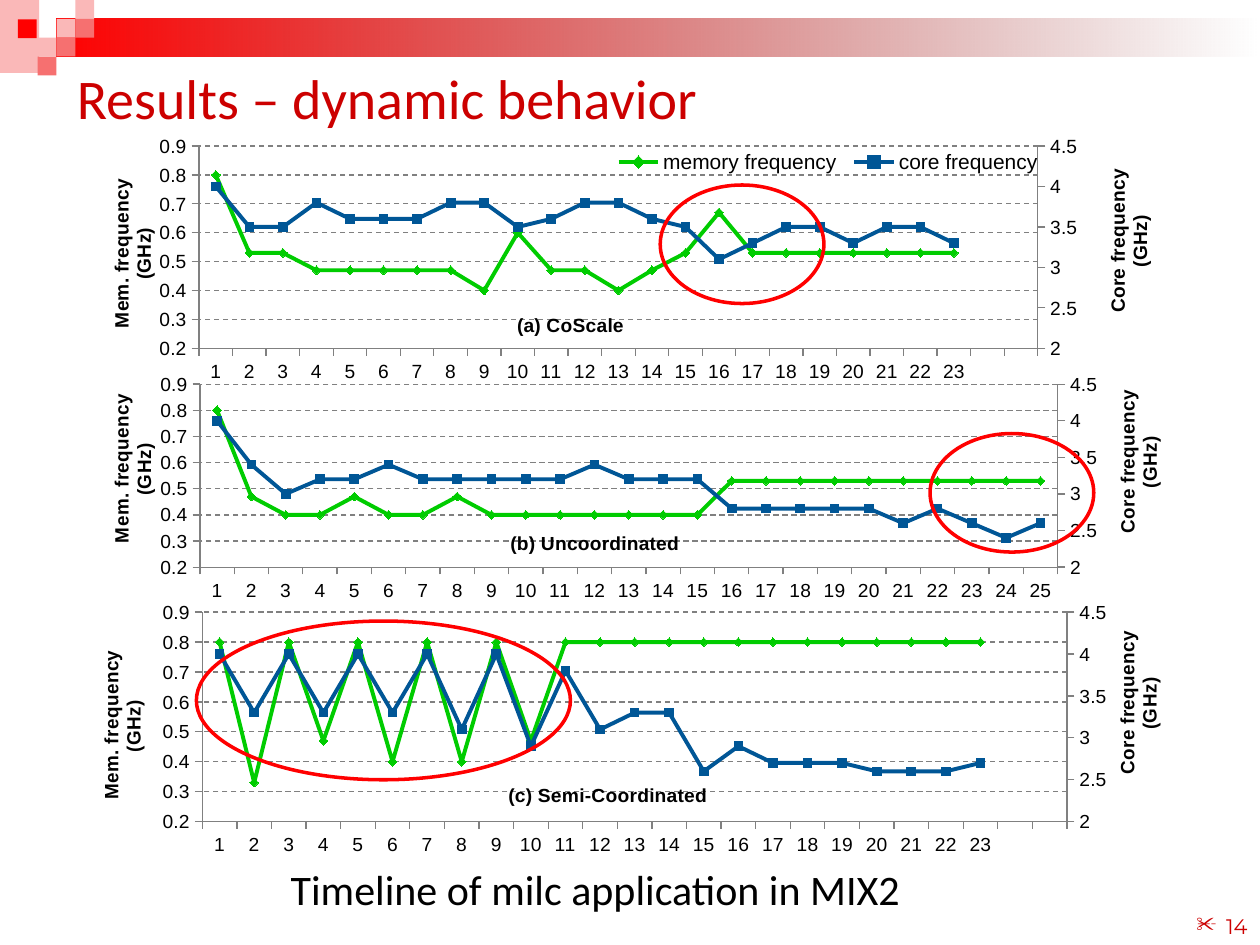
from copy import deepcopy
from dataclasses import dataclass

from lxml import etree
from pptx import Presentation
from pptx import util as u
from pptx.chart import axis as ax
from pptx.chart import data as cd
from pptx.dml.color import RGBColor
from pptx.enum import chart as ce, dml, shapes, text
from pptx.oxml import ns


@dataclass(frozen=True)
class Theme:
    red: str = "FF0000"
    rose: str = "F67070"
    pink: str = "FAB8B8"
    heading: str = "CC0000"
    ink: str = "000000"
    grid: str = "808080"
    memory: str = "00CC00"
    core: str = "005696"
    body_font: str = "Calibri"
    chart_font: str = "Arial"
    number_font: str = "Montserrat"
    title_size: int = 32
    caption_size: int = 24
    legend_size: int = 12
    number_size: int = 12
    chart_size: int = 11


THEME = Theme()
EPOCHS = 25
UNIT = 0.38  # side of a corner square, cm

# box in cm; plot, title and axis title places as fractions of the chart
COSCALE = dict(
    title="(a) CoScale", box=(2.11, 2.72, 21.21, 5), plot=(0.09, 0.04, 0.8, 0.82),
    title_at=(0.39, 0.7), left_at=(0, 0.16), right_at=(0.95, 0.12),
    legend=(0.48, 0.06, 0.42, 0.09),
    memory=[0.8, 0.53, 0.53] + [0.47] * 5 + [0.4, 0.6, 0.47, 0.47, 0.4, 0.47, 0.53, 0.67]
    + [0.53] * 7,
    core=[4, 3.5, 3.5, 3.8, 3.6, 3.6, 3.6, 3.8, 3.8, 3.5, 3.6, 3.8, 3.8, 3.6, 3.5, 3.1,
          3.3, 3.5, 3.5, 3.3, 3.5, 3.5, 3.3])
SEMI = dict(
    title="(c) Semi-Coordinated", box=(1.9, 12.12, 21.79, 5.13), plot=(0.1, 0.04, 0.8, 0.84),
    title_at=(0.38, 0.71), left_at=(0, 0.19), right_at=(0.94, 0.11),
    memory=[0.8, 0.33, 0.8, 0.47, 0.8, 0.4, 0.8, 0.4, 0.8, 0.47] + [0.8] * 13,
    core=[4, 3.3, 4, 3.3, 4, 3.3, 4, 3.1, 4, 2.9, 3.8, 3.1, 3.3, 3.3, 2.6, 2.9,
          2.7, 2.7, 2.7, 2.6, 2.6, 2.6, 2.7])
UNCOORDINATED = dict(
    title="(b) Uncoordinated", box=(2.11, 7.52, 21.41, 4.6), plot=(0.09, 0.05, 0.81, 0.82),
    title_at=(0.38, 0.69), left_at=(0, 0.09), right_at=(0.95, 0.07),
    memory=[0.8, 0.47, 0.4, 0.4, 0.47, 0.4, 0.4, 0.47] + [0.4] * 7 + [0.53] * 10,
    core=[4, 3.4, 3, 3.2, 3.2, 3.4] + [3.2] * 5 + [3.4] + [3.2] * 3 + [2.8] * 5
    + [2.6, 2.8, 2.6, 2.4, 2.6])


def rgb(value):
    return RGBColor.from_string(value)


def cm(box):
    return [u.Cm(length) for length in box]


def element(parent, tag, **attributes):
    return etree.SubElement(parent, ns.qn(tag), attributes)


def set_font(font, size, color=THEME.ink, name=THEME.chart_font, bold=False):
    font.size, font.name, font.bold = u.Pt(size), name, bold
    font.color.rgb = rgb(color)


def add_text(page, box, words, *, size, color, font=THEME.body_font,
             align=text.PP_ALIGN.LEFT, anchor=text.MSO_ANCHOR.TOP, spacing=None, bullet=None):
    frame = page.shapes.add_textbox(*cm(box)).text_frame
    frame.word_wrap, frame.vertical_anchor = True, anchor
    para = frame.paragraphs[0]
    para.alignment = align
    if spacing:
        para.line_spacing = spacing
    if bullet:
        properties = para._p.get_or_add_pPr()
        properties.set("marL", str(u.Cm(0.6)))
        properties.set("indent", str(-u.Cm(0.6)))
        element(properties, "a:buChar", char=bullet)
    span = para.add_run()
    span.text = words
    set_font(span.font, size, color, font)


def add_rect(page, box, color):
    rect = page.shapes.add_shape(shapes.MSO_SHAPE.RECTANGLE, *cm(box))
    rect.shadow.inherit = False
    rect.line.fill.background()
    rect.fill.solid()
    rect.fill.fore_color.rgb = rgb(color)
    return rect


def add_banner(page):
    """Draw the fading bar and the corner squares, on a grid of UNIT."""
    add_rect(page, (0, 0, 0.79, 1.47), THEME.pink)
    bar = add_rect(page, (3 * UNIT, 1.2 * UNIT, 25.4 - 3 * UNIT, 2 * UNIT), THEME.red)
    bar.top = u.Cm(UNIT)
    bar.fill.gradient()
    bar.fill.gradient_angle = 0
    start, end = bar.fill.gradient_stops
    start.color.rgb, end.color.rgb = rgb(THEME.red), rgb("760000")
    start.position, end.position = 0, 1
    color = end._gs.find(ns.qn("a:srgbClr"))
    element(color, "a:alpha", val="0")
    for column, row, fill in ((3, 1, THEME.pink), (4, 0, THEME.pink), (4, 1, THEME.rose),
                              (2, 2, THEME.pink), (0.95, 1.03, THEME.red),
                              (3, 2, THEME.rose), (2, 3, THEME.rose)):
        add_rect(page, (column * UNIT, row * UNIT, UNIT, UNIT), fill)


def add_ring(page, box):
    ring = page.shapes.add_shape(shapes.MSO_SHAPE.OVAL, *cm(box))
    ring.shadow.inherit = False
    ring.fill.background()
    ring.line.color.rgb, ring.line.width = rgb(THEME.red), u.Pt(2)


def make_layout(place, inner=False):
    """Return a c:layout for (x, y) or (x, y, w, h) as chart fractions."""
    layout = etree.Element(ns.qn("c:layout"))
    manual = element(layout, "c:manualLayout")
    if inner:
        element(manual, "c:layoutTarget", val="inner")
    for mode in ("xMode", "yMode"):
        element(manual, f"c:{mode}", val="edge")
    for key, value in zip("xywh", place):
        element(manual, f"c:{key}", val=str(value))
    return layout


def place_after(anchor, layout):
    parent = anchor.getparent()
    for old in parent.findall(ns.qn("c:layout")):
        parent.remove(old)
    anchor.addnext(layout)


def set_title(title, words, place, upright=False):
    frame = title.text_frame
    frame.text = words
    set_font(frame.paragraphs[0].runs[0].font, THEME.chart_size, bold=True)
    if upright:
        frame._txBody.bodyPr.set("rot", "-5400000")
        frame._txBody.bodyPr.set("vert", "horz")
    place_after(title._element.find(ns.qn("c:tx")), make_layout(place))


def format_axis(axis):
    axis.major_tick_mark = ce.XL_TICK_MARK.OUTSIDE
    axis.format.line.color.rgb = rgb(THEME.grid)
    set_font(axis.tick_labels.font, THEME.chart_size)


def format_value_axis(axis, words, place, low, high, step):
    format_axis(axis)
    axis.minimum_scale, axis.maximum_scale, axis.major_unit = low, high, step
    set_title(axis.axis_title, words, place, upright=True)


def add_right_axis(chart):
    """Move the second series to its own axes and return the right-hand one."""
    lines = chart._chartSpace.find(".//" + ns.qn("c:lineChart"))
    twin = deepcopy(lines)
    lines.remove(lines.findall(ns.qn("c:ser"))[1])
    twin.remove(twin.find(ns.qn("c:ser")))
    lines.addnext(twin)
    category, value = (deepcopy(axis._element) for axis in (chart.category_axis, chart.value_axis))
    chart.value_axis._element.addnext(value)
    value.addnext(category)
    for axis, own, other in ((category, "5001", "5002"), (value, "5002", "5001")):
        axis.find(ns.qn("c:axId")).set("val", own)
        axis.find(ns.qn("c:crossAx")).set("val", other)
    for reference, number in zip(twin.findall(ns.qn("c:axId")), ("5001", "5002")):
        reference.set("val", number)
    category.find(ns.qn("c:delete")).set("val", "1")
    value.find(ns.qn("c:axPos")).set("val", "r")
    value.find(ns.qn("c:crosses")).set("val", "max")
    return ax.ValueAxis(value)


def add_frequency_chart(page, *, title, box, plot, title_at, left_at, right_at,
                        memory, core, legend=None):
    count = len(memory)
    gap = [None] * (EPOCHS - count)
    data = cd.CategoryChartData()
    data.categories = [str(n) if n <= count else "" for n in range(1, EPOCHS + 1)]
    data.add_series("memory frequency", memory + gap)
    data.add_series("core frequency", core + gap)
    chart = page.shapes.add_chart(ce.XL_CHART_TYPE.LINE_MARKERS, *cm(box), data).chart
    set_font(chart.font, THEME.chart_size)
    set_title(chart.chart_title, title, title_at)
    chart.chart_title.include_in_layout = True
    chart.plots[0].vary_by_categories = False
    styles = ((THEME.memory, ce.XL_MARKER_STYLE.DIAMOND), (THEME.core, ce.XL_MARKER_STYLE.SQUARE))
    for series, (color, marker) in zip(chart.series, styles):
        series.smooth = False
        series.format.line.color.rgb, series.format.line.width = rgb(color), u.Pt(2.25)
        series.marker.style, series.marker.size = marker, 5
        series.marker.format.fill.solid()
        series.marker.format.fill.fore_color.rgb = rgb(color)
        series.marker.format.line.color.rgb = rgb(color)
    format_axis(chart.category_axis)
    left = chart.value_axis
    right = add_right_axis(chart)
    right.has_major_gridlines = False
    format_value_axis(right, "Core frequency (GHz)", right_at, 2, 4.5, 0.5)
    format_value_axis(left, "Mem. frequency (GHz)", left_at, 0.2, 0.9, 0.1)
    for axis in (left, right):
        axis.tick_labels.number_format_is_linked = False
        axis.tick_labels.number_format = "General"
    grid = left.major_gridlines.format.line
    grid.color.rgb, grid.dash_style = rgb(THEME.grid), dml.MSO_LINE.DASH
    area = chart._chartSpace.find(".//" + ns.qn("c:plotArea"))
    for old in area.findall(ns.qn("c:layout")):
        area.remove(old)
    area.insert(0, make_layout(plot, inner=True))
    chart.has_legend = legend is not None
    if legend:
        chart.legend.position = ce.XL_LEGEND_POSITION.TOP
        chart.legend.include_in_layout = False
        set_font(chart.legend.font, THEME.legend_size)
        place_after(chart.legend._element.find(ns.qn("c:legendPos")), make_layout(legend))


def main():
    deck = Presentation()
    deck.slide_width, deck.slide_height = u.Cm(25.4), u.Cm(19.05)
    page = deck.slides.add_slide(deck.slide_layouts[6])
    add_banner(page)
    add_text(page, (19.48, 17.78, 5.92, 1.27), "14", size=THEME.number_size, color=THEME.heading,
             font=THEME.number_font, align=text.PP_ALIGN.RIGHT, anchor=text.MSO_ANCHOR.BOTTOM,
             bullet="✂")
    add_text(page, (1.3, 0.93, 22.86, 2.06), "Results – dynamic behavior", size=THEME.title_size,
             color=THEME.heading, anchor=text.MSO_ANCHOR.MIDDLE)
    for panel in (COSCALE, SEMI, UNCOORDINATED):
        add_frequency_chart(page, **panel)
    add_text(page, (5.61, 17.68, 13.21, 0.81), "Timeline of milc application in MIX2",
             size=THEME.caption_size, color=THEME.ink, spacing=0.55)
    for box in ((13.31, 3.73, 3.3, 2.39), (18.75, 8.74, 3.3, 2.39), (3.96, 12.52, 7.54, 3.2)):
        add_ring(page, box)
    deck.save("out.pptx")


if __name__ == "__main__":
    main()
